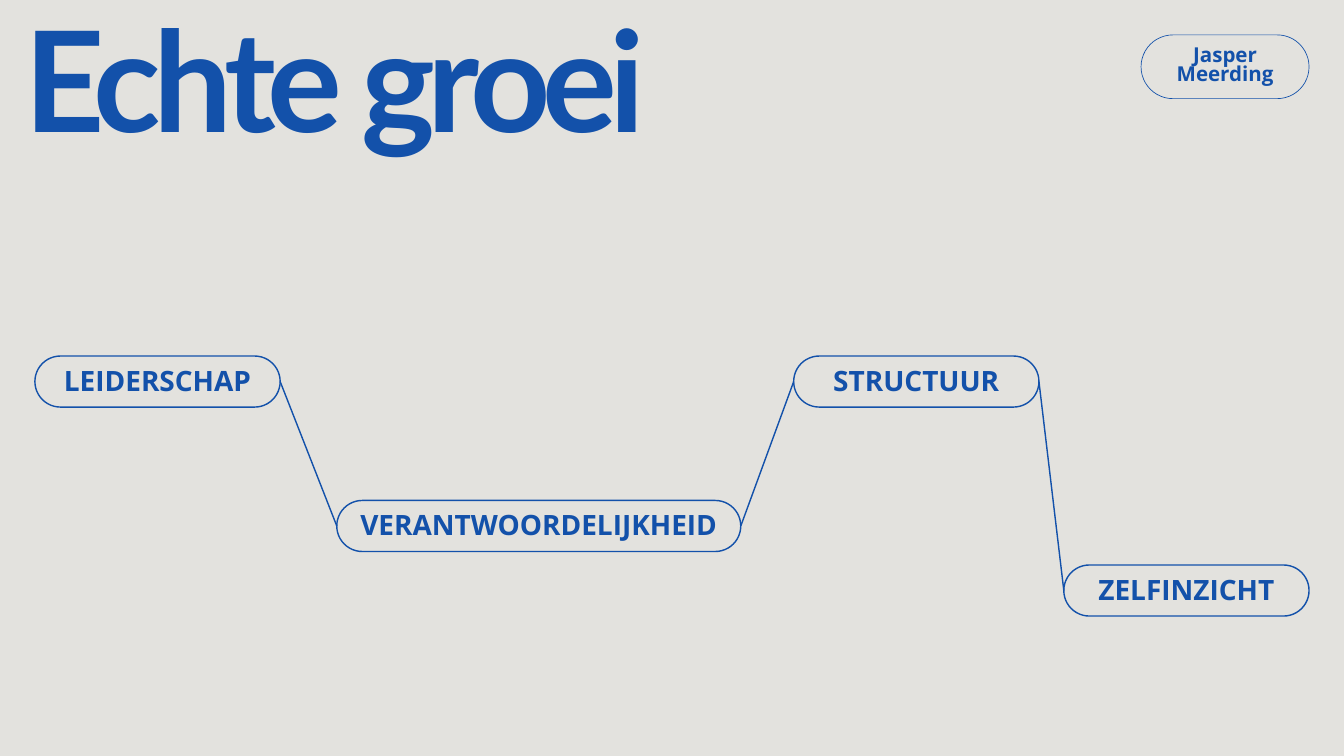
from dataclasses import dataclass
from itertools import pairwise

from lxml.etree import SubElement
from pptx import Presentation
from pptx.dml.color import RGBColor
from pptx.enum.shapes import MSO_CONNECTOR, MSO_SHAPE
from pptx.enum.text import MSO_ANCHOR, MSO_AUTO_SIZE, PP_ALIGN
from pptx.oxml.ns import qn
from pptx.util import Cm, Pt


@dataclass(frozen=True)
class Theme:
    """Colours, fonts and type sizes of the slide."""
    blue: RGBColor = RGBColor(0x13, 0x51, 0xAA)
    paper: RGBColor = RGBColor(0xE3, 0xE2, 0xDE)
    title_font: str = "Lato"
    body_font: str = "Open Sans"
    title_size: int = 150
    step_size: int = 30
    name_size: int = 22
    line: float = 1.5
    thin_line: float = 0.75


THEME = Theme()
MARGIN = 1.32
STEP_HEIGHT = 1.93
STEPS = [
    ("LEIDERSCHAP", MARGIN, 13.46, 9.27),
    ("VERANTWOORDELIJKHEID", 12.73, 18.92, 15.27),
    ("STRUCTUUR", 30, 13.46, 9.27),
    ("ZELFINZICHT", 40.21, 21.36, 9.27),
]


def set_text(sp, text, font, size, spacing, align, anchor):
    """Write bold blue text in a shape without insets."""
    tf = sp.text_frame
    tf.text = text
    tf.word_wrap = True
    tf.auto_size = MSO_AUTO_SIZE.NONE
    tf.vertical_anchor = anchor
    tf.margin_left = tf.margin_right = tf.margin_top = tf.margin_bottom = 0
    p = tf.paragraphs[0]
    p.alignment = align
    p.line_spacing = Pt(spacing)
    r = p.runs[0]
    r.font.name = font
    r.font.size = Pt(size)
    r.font.bold = True
    r.font.color.rgb = THEME.blue
    return r


def add_title(s, text):
    """Place the tightly tracked headline in the title placeholder."""
    sp = s.shapes.title
    sp.left, sp.top, sp.width, sp.height = Cm(0.91), Cm(0.76), Cm(39.67), Cm(5.59)
    r = set_text(sp, text, THEME.title_font, THEME.title_size, THEME.title_size,
                 PP_ALIGN.LEFT, MSO_ANCHOR.TOP)
    r._r.get_or_add_rPr().set("spc", "-820")


def add_pill(s, text, left, top, width, height, size, spacing, line):
    """Add an outlined pill with a centred label."""
    sp = s.shapes.add_shape(MSO_SHAPE.ROUNDED_RECTANGLE,
                            Cm(left), Cm(top), Cm(width), Cm(height))
    sp.adjustments[0] = 0.5
    sp.shadow.inherit = False
    sp.fill.background()
    sp.line.color.rgb = THEME.blue
    sp.line.width = Pt(line)
    set_text(sp, text, THEME.body_font, size, spacing,
             PP_ALIGN.CENTER, MSO_ANCHOR.MIDDLE)
    return sp


def add_link(s, start, end):
    """Join the right side of one pill to the left side of the next."""
    cn = s.shapes.add_connector(MSO_CONNECTOR.STRAIGHT, 0, 0, 0, 0)
    cn.begin_connect(start, 3)
    cn.end_connect(end, 1)
    cn.line.color.rgb = THEME.blue
    cn.line.width = Pt(THEME.line)
    SubElement(cn._element.spPr, qn("a:effectLst"))


def main():
    """Build the slide and save it."""
    prs = Presentation()
    prs.slide_width, prs.slide_height = Cm(50.8), Cm(28.58)
    s = prs.slides.add_slide(prs.slide_layouts[5])
    s.background.fill.solid()
    s.background.fill.fore_color.rgb = THEME.paper

    add_title(s, "Echte groei")
    pills = [add_pill(s, text, left, top, width, STEP_HEIGHT,
                      THEME.step_size, THEME.step_size * 1.1, THEME.line)
             for text, left, top, width in STEPS]
    for start, end in pairwise(pills):
        add_link(s, start, end)
    add_pill(s, "Jasper Meerding", 43.13, MARGIN, 6.35, 2.41,
             THEME.name_size, THEME.name_size * 0.9, THEME.thin_line)
    prs.save("out.pptx")


if __name__ == "__main__":
    main()
